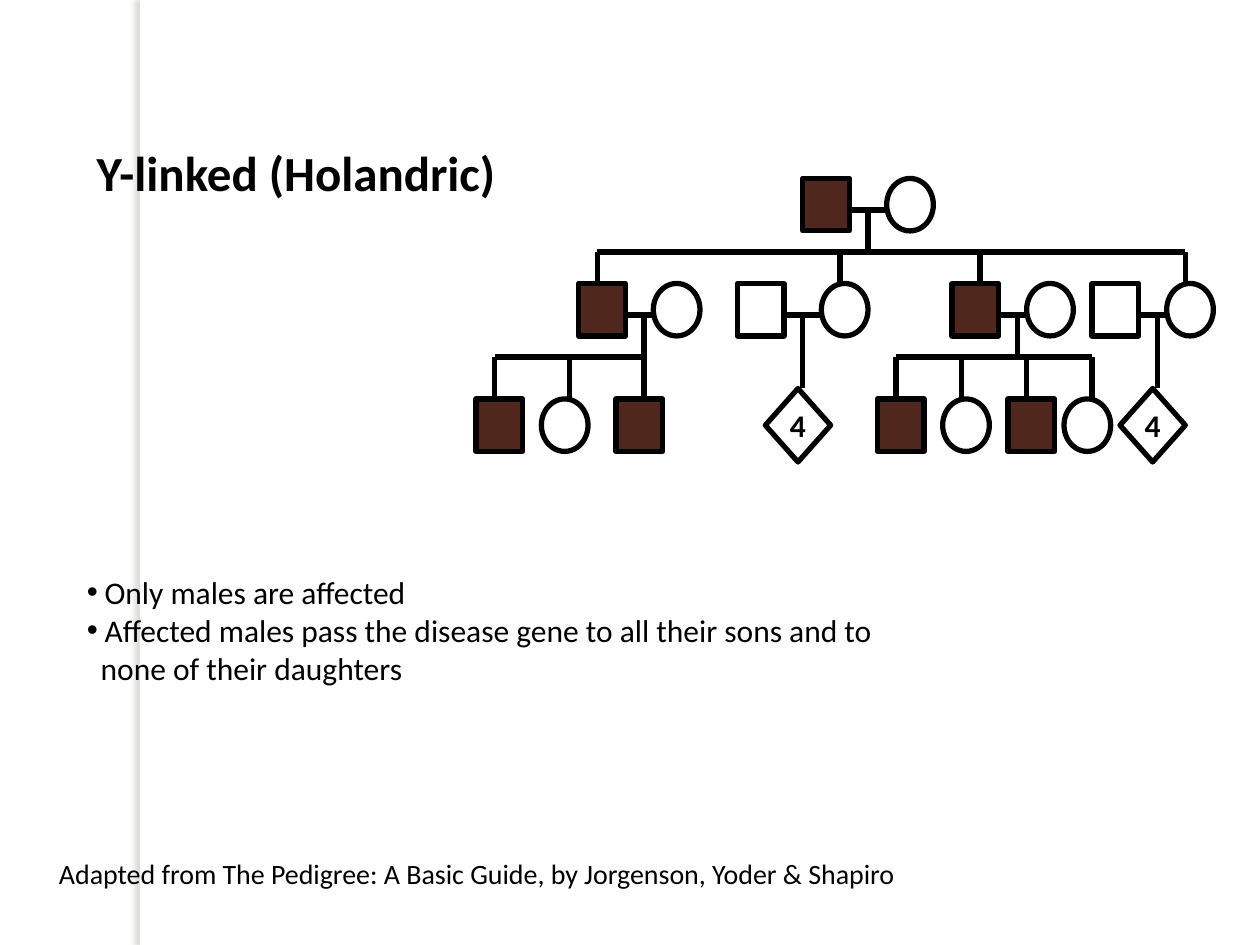
from lxml.etree import SubElement
from pptx import Presentation
from pptx.dml.color import RGBColor
from pptx.enum.shapes import MSO_CONNECTOR as Link, MSO_SHAPE as Preset
from pptx.enum.text import MSO_ANCHOR as Anchor, PP_ALIGN as Align
from pptx.oxml.ns import qn
from pptx.util import Cm, Pt

# Content: texts as (left, top, width, height, format, paragraphs), in cm;
# each paragraph is (text, bullet, left margin)
TITLE = {"size": Pt(28), "bold": True}
BODY = {"size": Pt(18)}
SOURCE = {"size": Pt(16)}
COUNT = {"size": Pt(18), "bold": True}
TEXTS = [
    (1.7, 2.74, 9.8, 1.45, TITLE, [("Y-linked (Holandric)", False, 0)]),
    (1.5, 11.43, 16.61, 2.57, BODY, [
        ("Only males are affected", True, 0.36),
        ("Affected males pass the disease gene to all their sons and to", True, 0.36),
        ("none of their daughters", False, 0.28),
    ]),
    (0.94, 17.15, 17.4, 0.94, SOURCE, [
        ("Adapted from The Pedigree: A Basic Guide, by Jorgenson, Yoder & Shapiro", False, 0),
    ]),
]

# Pedigree on a grid of 135 columns by 90 rows
COL, ROW = 25.4 / 135, 19.05 / 90
SIZE, DIAMOND = 5, 7
PEOPLE = {  # row: (affected men, unaffected men, women)
    17: ([86], [], [95]),
    27: ([62, 102], [79, 117], [70, 88, 110, 125]),
    38: ([51, 66, 94, 108], [], [58, 101, 114]),
}
GROUPS = [(37, 82, "4"), (37, 120, "4")]  # row, column, number of children
COUPLES = [  # row, man, woman, row where the descent line ends
    (17, 86, 95, 24), (27, 62, 70, 34), (27, 79, 88, 37),
    (27, 102, 110, 34), (27, 117, 125, 37),
]
SIBLINGS = [  # row of the bar, row of the children, columns of the drops
    (24, 27, [64, 90, 105, 127]),
    (34, 38, [53, 61, 69]),
    (34, 38, [96, 103, 110, 117]),
]
BLACK, WHITE, BROWN, SHADE = "000000", "FFFFFF", "4F271C", "736F63"


def color(value):
    return RGBColor.from_string(value)


def set_font(para, values):
    settings = {"name": "Calibri", **values}
    for span in para.runs:
        for name, value in settings.items():
            setattr(span.font, name, value)
        span.font.color.rgb = color(BLACK)


def add_line(page, x1, y1, x2, y2):
    line = page.shapes.add_connector(
        Link.STRAIGHT, Cm(x1 * COL), Cm(y1 * ROW), Cm(x2 * COL), Cm(y2 * ROW))
    line.line.color.rgb = color(BLACK)
    line.line.width = Pt(3)
    SubElement(line._element.spPr, qn("a:effectLst"))


def add_symbol(page, preset, x, y, fill=WHITE, size=SIZE):
    symbol = page.shapes.add_shape(
        preset, Cm(x * COL), Cm(y * ROW), Cm(size * COL), Cm(size * ROW))
    symbol.shadow.inherit = False
    symbol.fill.solid()
    symbol.fill.fore_color.rgb = color(fill)
    symbol.line.color.rgb = color(BLACK)
    symbol.line.width = Pt(3)
    return symbol


def add_strip(page):
    strip = page.shapes.add_shape(Preset.RECTANGLE, Cm(2.82), 0, Cm(0.2), Cm(19.05))
    strip.fill.solid()
    strip.fill.fore_color.rgb = color(WHITE)
    strip.line.fill.background()
    effects = SubElement(strip._element.spPr, qn("a:effectLst"))
    shadow = SubElement(effects, qn("a:outerShdw"), blurRad=str(Pt(3)),
                        dist=str(Pt(3)), dir="10800000", algn="tl", rotWithShape="0")
    shade = SubElement(shadow, qn("a:srgbClr"), val=SHADE)
    SubElement(shade, qn("a:alpha"), val="25000")


def add_text(page, left, top, width, height, values, paragraphs):
    box = page.shapes.add_textbox(Cm(left), Cm(top), Cm(width), Cm(height))
    frame = box.text_frame
    frame.word_wrap = False
    for number, (text, bullet, margin) in enumerate(paragraphs):
        para = frame.add_paragraph() if number else frame.paragraphs[0]
        para.text = text
        props = para._p.get_or_add_pPr()
        props.set("marL", str(Cm(margin)))
        if bullet:
            props.set("indent", str(-Cm(margin)))
            SubElement(props, qn("a:buFont"), typeface="Arial")
            SubElement(props, qn("a:buChar"), char="•")
        set_font(para, values)


def add_pedigree(page):
    # Marriage and descent lines
    for row, man, woman, end in COUPLES:
        middle = (man + SIZE + woman + 1) // 2
        add_line(page, man + SIZE, row + 3, woman, row + 3)
        add_line(page, middle, row + 3, middle, end)
    # Sibling bars with their drops
    for bar, child_row, drops in SIBLINGS:
        add_line(page, drops[0], bar, drops[-1], bar)
        for x in drops:
            add_line(page, x, bar, x, child_row)
    # Men and women
    for row, (affected, unaffected, women) in PEOPLE.items():
        for columns, preset, fill in [
            (affected, Preset.RECTANGLE, BROWN),
            (unaffected, Preset.RECTANGLE, WHITE),
            (women, Preset.OVAL, WHITE),
        ]:
            for x in columns:
                add_symbol(page, preset, x, row, fill)
    # Groups of children
    for row, x, count in GROUPS:
        frame = add_symbol(page, Preset.DIAMOND, x, row, size=DIAMOND).text_frame
        frame.word_wrap = False
        frame.vertical_anchor = Anchor.MIDDLE
        para = frame.paragraphs[0]
        para.text = count
        para.alignment = Align.CENTER
        set_font(para, COUNT)


def main():
    deck = Presentation()
    deck.slide_width, deck.slide_height = Cm(25.4), Cm(19.05)
    page = deck.slides.add_slide(deck.slide_layouts[6])
    add_strip(page)
    add_pedigree(page)
    for text in TEXTS:
        add_text(page, *text)
    deck.save("out.pptx")


if __name__ == "__main__":
    main()
